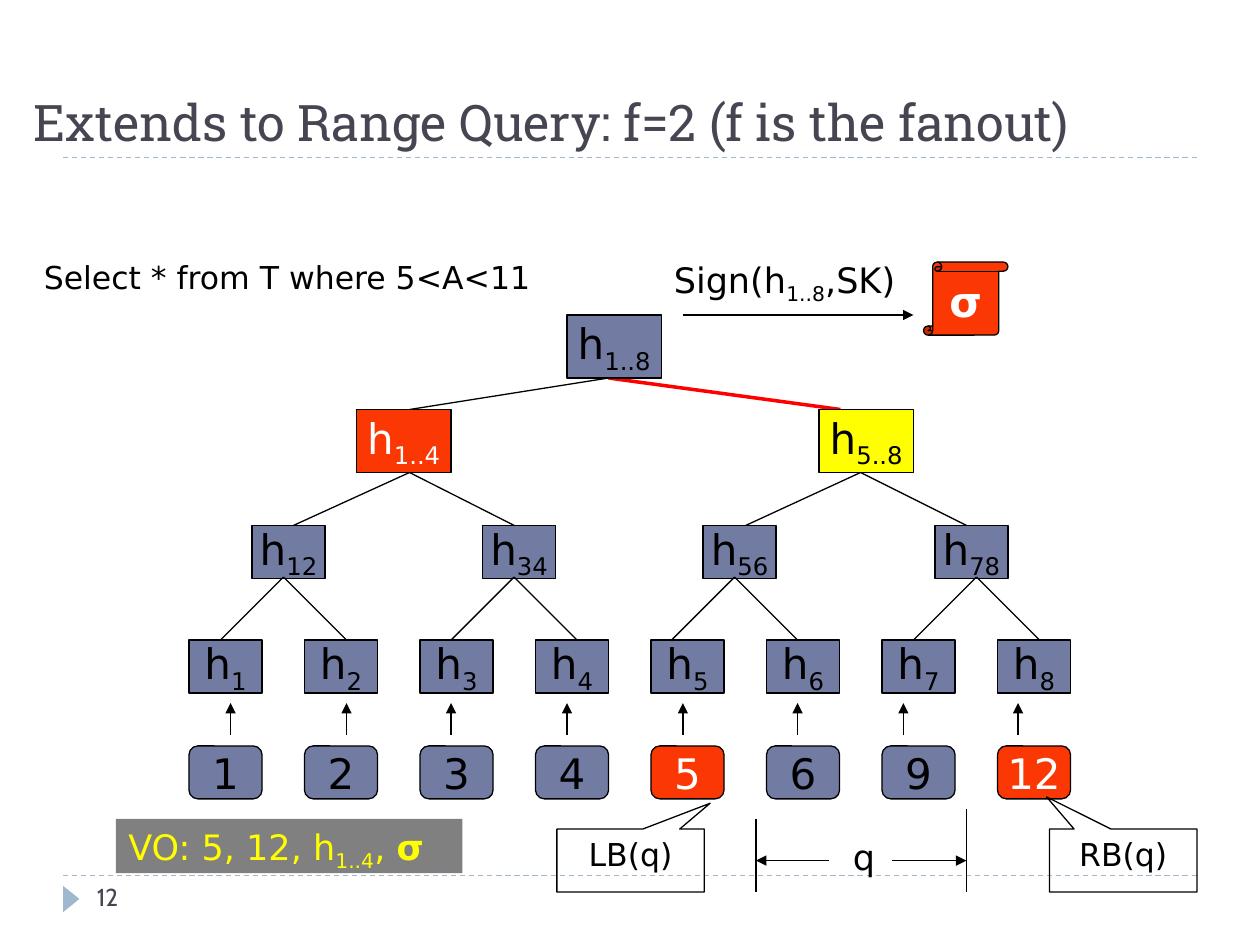
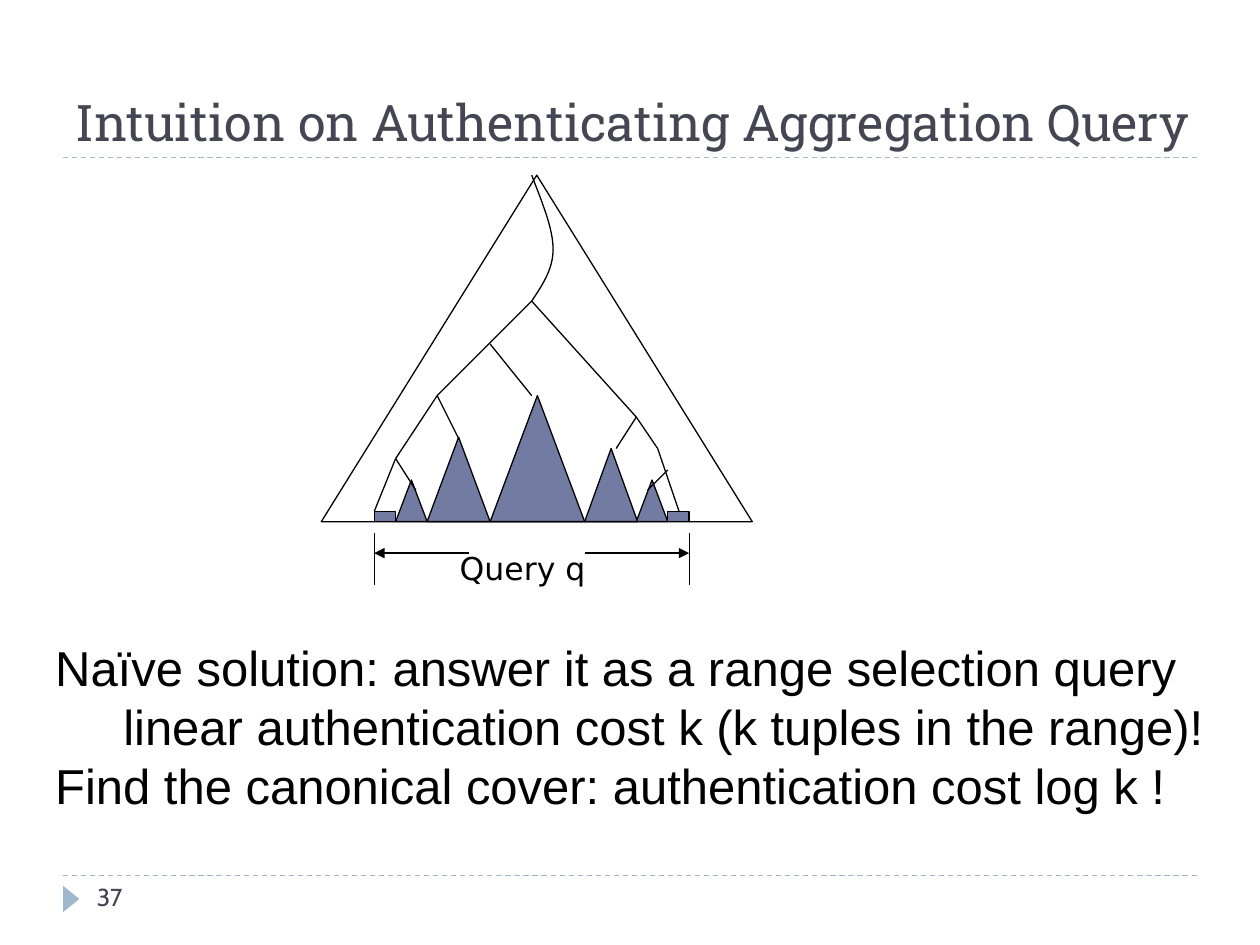
"""Build two slides on authenticating range and aggregation queries over hash trees."""
from dataclasses import dataclass
from typing import NamedTuple

from lxml import etree
from pptx import Presentation
from pptx import util as u
from pptx.dml.color import RGBColor
from pptx.enum import dml, shapes, text
from pptx.oxml import ns

COLORS = {
    "accent": "9FB8CD", "title": "464653", "node": "727CA3", "black": "000000",
    "white": "FFFFFF", "hit": "FB3803", "path": "FF0000", "yellow": "FFFF00",
    "grey": "808080",
}
BODY_FONT = "DejaVu Sans"
KIND = shapes.MSO_SHAPE
CENTER = text.PP_ALIGN.CENTER


class Run(NamedTuple):
    text: str
    sub: bool = False
    bold: bool = False


class Box(NamedTuple):
    x: float
    y: float
    w: float
    h: float


class Line(NamedTuple):
    x1: float
    y1: float
    x2: float
    y2: float


@dataclass
class Style:
    size: float
    font: str = BODY_FONT
    color: str = "black"
    anchor: text.MSO_ANCHOR = text.MSO_ANCHOR.TOP
    align: text.PP_ALIGN = text.PP_ALIGN.LEFT
    wrap: bool = True


@dataclass
class Span:
    left: float
    right: float
    inner_left: float
    inner_right: float
    y: float
    left_top: float
    right_top: float
    bottom: float
    label: str
    label_box: Box
    size: float


def rgb(name: str) -> RGBColor:
    return RGBColor.from_string(COLORS[name])


def inches(*values: float) -> list[int]:
    return [u.Inches(v) for v in values]


def hashed(sub: str) -> list[Run]:
    return [Run("h"), Run(sub, sub=True)]


def write(tf, paragraphs: list[list[Run]], style: Style) -> None:
    tf.word_wrap = style.wrap
    tf.vertical_anchor = style.anchor
    for i, runs in enumerate(paragraphs):
        p = tf.add_paragraph() if i else tf.paragraphs[0]
        p.alignment = style.align
        for item in runs:
            r = p.add_run()
            r.text = item.text
            r.font.size = u.Pt(style.size)
            r.font.name = style.font
            r.font.color.rgb = rgb(style.color)
            r.font.bold = item.bold
            if item.sub:
                r.font._element.set("baseline", "-25000")


def add_text(s, box: Box, paragraphs: list[list[Run]], style: Style):
    sp = s.shapes.add_textbox(*inches(*box))
    write(sp.text_frame, paragraphs, style)
    return sp


def paint(sp, fill: str | None, line: str | None = "black") -> None:
    sp.shadow.inherit = False
    if fill:
        sp.fill.solid()
        sp.fill.fore_color.rgb = rgb(fill)
    else:
        sp.fill.background()
    if line:
        sp.line.color.rgb = rgb(line)
        sp.line.width = u.Pt(0.75)
    else:
        sp.line.fill.background()


def add_shape(s, kind: shapes.MSO_SHAPE, box: Box, fill: str | None = "node",
              line: str | None = "black"):
    sp = s.shapes.add_shape(kind, *inches(*box))
    paint(sp, fill, line)
    return sp


def add_node(s, kind: shapes.MSO_SHAPE, box: Box, runs: list[Run], fill: str = "node") -> None:
    sp = add_shape(s, kind, box, fill)
    color = "white" if fill == "hit" else "black"
    write(sp.text_frame, [runs], Style(24, color=color, anchor=text.MSO_ANCHOR.MIDDLE,
                                       align=CENTER, wrap=False))


def add_line(s, ends: Line, color: str = "black", width: float = 0.75,
             arrow: bool = False, dash: bool = False) -> None:
    c = s.shapes.add_connector(shapes.MSO_CONNECTOR.STRAIGHT, *inches(*ends))
    c.line.color.rgb = rgb(color)
    c.line.width = u.Pt(width)
    if dash:
        c.line.dash_style = dml.MSO_LINE.DASH
    sp_pr = c._element.spPr
    if arrow:
        etree.SubElement(sp_pr.find(ns.qn("a:ln")), ns.qn("a:tailEnd"), type="triangle")
    etree.SubElement(sp_pr, ns.qn("a:effectLst"))


def add_span(s, span: Span) -> None:
    add_line(s, Line(span.left, span.left_top, span.left, span.bottom))
    add_line(s, Line(span.right, span.right_top, span.right, span.bottom))
    add_line(s, Line(span.inner_right, span.y, span.right, span.y), arrow=True)
    add_line(s, Line(span.inner_left, span.y, span.left, span.y), arrow=True)
    add_text(s, span.label_box, [[Run(span.label)]], Style(span.size))


def add_callout(s, x: float, label: str, pointer: tuple[float, float]) -> None:
    sp = add_shape(s, KIND.RECTANGULAR_CALLOUT, Box(x, 6.58, 1.17, 0.5), None)
    sp.adjustments[0], sp.adjustments[1] = pointer
    write(sp.text_frame, [[Run(label)]], Style(18, align=CENTER))


def add_curve(s, points: list[tuple[float, float]], steps: int = 12) -> None:
    curve = [inches(*points[0])]
    for k in range(0, len(points) - 1, 3):
        controls = points[k:k + 4]
        for i in range(1, steps + 1):
            t = i / steps
            weights = ((1 - t) ** 3, 3 * t * (1 - t) ** 2, 3 * t * t * (1 - t), t ** 3)
            curve.append(inches(*(sum(w * q[axis] for w, q in zip(weights, controls))
                                  for axis in (0, 1))))
    builder = s.shapes.build_freeform(*curve[0])
    builder.add_line_segments(curve[1:], close=False)
    paint(builder.convert_to_shape(), None)


def new_slide(prs, title: str, title_box: Box, number: str):
    s = prs.slides.add_slide(prs.slide_layouts[6])
    for y in (6.95, 1.25):
        add_line(s, Line(0.5, y, 9.5, y), "accent", dash=True)
    marker = add_shape(s, KIND.ISOSCELES_TRIANGLE, Box(0.46, 7.07, 0.21, 0.13), "accent", None)
    marker.rotation = 90
    add_text(s, title_box, [[Run(title)]],
             Style(28.8, "Roboto Slab", "title", text.MSO_ANCHOR.BOTTOM))
    add_text(s, Box(0.67, 6.95, 2.17, 0.4), [[Run(number)]], Style(14, "Cabin", "title"))
    return s


def range_query_slide(prs) -> None:
    s = new_slide(prs, "Extends to Range Query: f=2 (f is the fanout)",
                  Box(0.17, 0.96, 9.02, 0.29), "12")
    keys = ("1", "2", "3", "4", "5", "6", "9", "12")
    arrow_xs = (1.83, 2.75, 3.58, 4.5, 5.42, 6.33, 7.17, 8.08)
    for i, (key, arrow_x) in enumerate(zip(keys, arrow_xs)):
        x = 1.5 + i * 5.5 / 6
        fill = "hit" if key in ("5", "12") else "node"
        add_node(s, KIND.FLOWCHART_ALTERNATE_PROCESS, Box(x, 5.92, 0.58, 0.42), [Run(key)], fill)
        add_node(s, KIND.RECTANGLE, Box(x, 5.08, 0.58, 0.42), hashed(str(i + 1)))
        add_line(s, Line(arrow_x, 5.83, arrow_x, 5.58), arrow=True)

    pairs = (("12", 2, 2.25), ("34", 3.83, 4.08), ("56", 5.58, 5.83), ("78", 7.42, 7.75))
    for sub, x, fork in pairs:
        add_node(s, KIND.RECTANGLE, Box(x, 4.17, 0.58, 0.42), hashed(sub))
        for child in (fork - 0.5, fork + 0.5):
            add_line(s, Line(fork, 4.58, child, 5.08))

    for fork, children in ((3.25, (2.33, 4.08)), (6.83, (5.92, 7.67))):
        for child in children:
            add_line(s, Line(fork, 3.75, child, 4.17))
    add_line(s, Line(4.83, 3, 3.25, 3.25))
    add_line(s, Line(4.83, 3, 6.67, 3.25), "path", 2)
    for sub, x, y, fill in (("1..8", 4.5, 2.5, "node"), ("1..4", 2.83, 3.25, "hit"),
                            ("5..8", 6.5, 3.25, "yellow")):
        add_node(s, KIND.RECTANGLE, Box(x, y, 0.75, 0.5), hashed(sub), fill)

    add_text(s, Box(0.25, 2, 4.33, 0.4), [[Run("Select * from T where 5<A<11")]], Style(18))
    add_text(s, Box(5.25, 2, 2.17, 0.43), [[Run("Sign(h"), Run("1..8", sub=True), Run(",SK)")]],
             Style(20))
    add_line(s, Line(5.42, 2.5, 7.25, 2.5), arrow=True)
    add_node(s, KIND.VERTICAL_SCROLL, Box(7.33, 2.08, 0.67, 0.58), [Run("σ", bold=True)], "hit")

    add_span(s, Span(6, 7.67, 6.58, 7.08, 6.83, 6.5, 6.42, 7.08,
                     "q", Box(6.67, 6.58, 0.42, 0.43), 20))
    add_callout(s, 4.42, "LB(q)", (0.54, -0.91))
    add_callout(s, 8.33, "RB(q)", (-0.52, -1.01))
    vo = add_shape(s, KIND.RECTANGLE, Box(0.92, 6.5, 2.75, 0.43), "grey", None)
    write(vo.text_frame, [[Run("VO: 5, 12, h"), Run("1..4", sub=True), Run(", "),
                           Run("σ", bold=True)]], Style(20, color="yellow"))


def aggregation_slide(prs) -> None:
    s = new_slide(prs, "Intuition on Authenticating Aggregation Query",
                  Box(0.5, 0.17, 9.36, 1.08), "37")
    base = 4.14
    add_curve(s, [(4.22, 2.39), (4.3, 2.27), (4.39, 2.14), (4.39, 1.98),
                  (4.39, 1.81), (4.3, 1.6), (4.22, 1.39)])
    add_shape(s, KIND.ISOSCELES_TRIANGLE, Box(2.55, 1.39, 3.42, 2.75), None)
    subtrees = ((3.14, 0.25, 0.33), (3.39, 0.5, 0.67), (3.89, 0.75, 1),
                (4.64, 0.42, 0.58), (5.05, 0.25, 0.33))
    for x, w, h in subtrees:
        add_shape(s, KIND.ISOSCELES_TRIANGLE, Box(x, base - h, w, h))
    for x in (2.97, 5.3):
        add_shape(s, KIND.RECTANGLE, Box(x, base - 0.08, 0.17, 0.08))

    branches = (
        ((2.97, 4.06), (3.14, 3.64), (3.47, 3.14), (4.22, 2.39),
         (5.05, 3.31), (5.22, 3.56), (5.39, 4.06)),
        ((3.14, 3.64), (3.3, 3.89)),
        ((3.47, 3.14), (3.64, 3.48)),
        ((3.89, 2.73), (4.22, 3.14)),
        ((4.89, 3.56), (5.05, 3.31)),
        ((5.14, 3.89), (5.3, 3.73)),
    )
    for branch in branches:
        for start, end in zip(branch, branch[1:]):
            add_line(s, Line(*start, *end))

    add_span(s, Span(2.97, 5.47, 3.72, 4.64, 4.39, 4.23, 4.23, 4.64,
                     "Query q", Box(3.55, 4.31, 1.42, 0.4), 18))
    notes = ("Naïve solution: answer it as a range selection query",
             "linear authentication cost k (k tuples in the range)!",
             "Find the canonical cover: authentication cost log k !")
    sp = add_text(s, Box(0.34, 5.01, 9.43, 1.51), [[Run(n)] for n in notes], Style(28, "Arial"))
    p = sp.text_frame.paragraphs[1]
    p._p.get_or_add_pPr().set("marL", str(u.Inches(0.54)))


def main() -> None:
    prs = Presentation()
    prs.slide_width, prs.slide_height = inches(10, 7.5)
    range_query_slide(prs)
    aggregation_slide(prs)
    prs.save("out.pptx")


if __name__ == "__main__":
    main()
